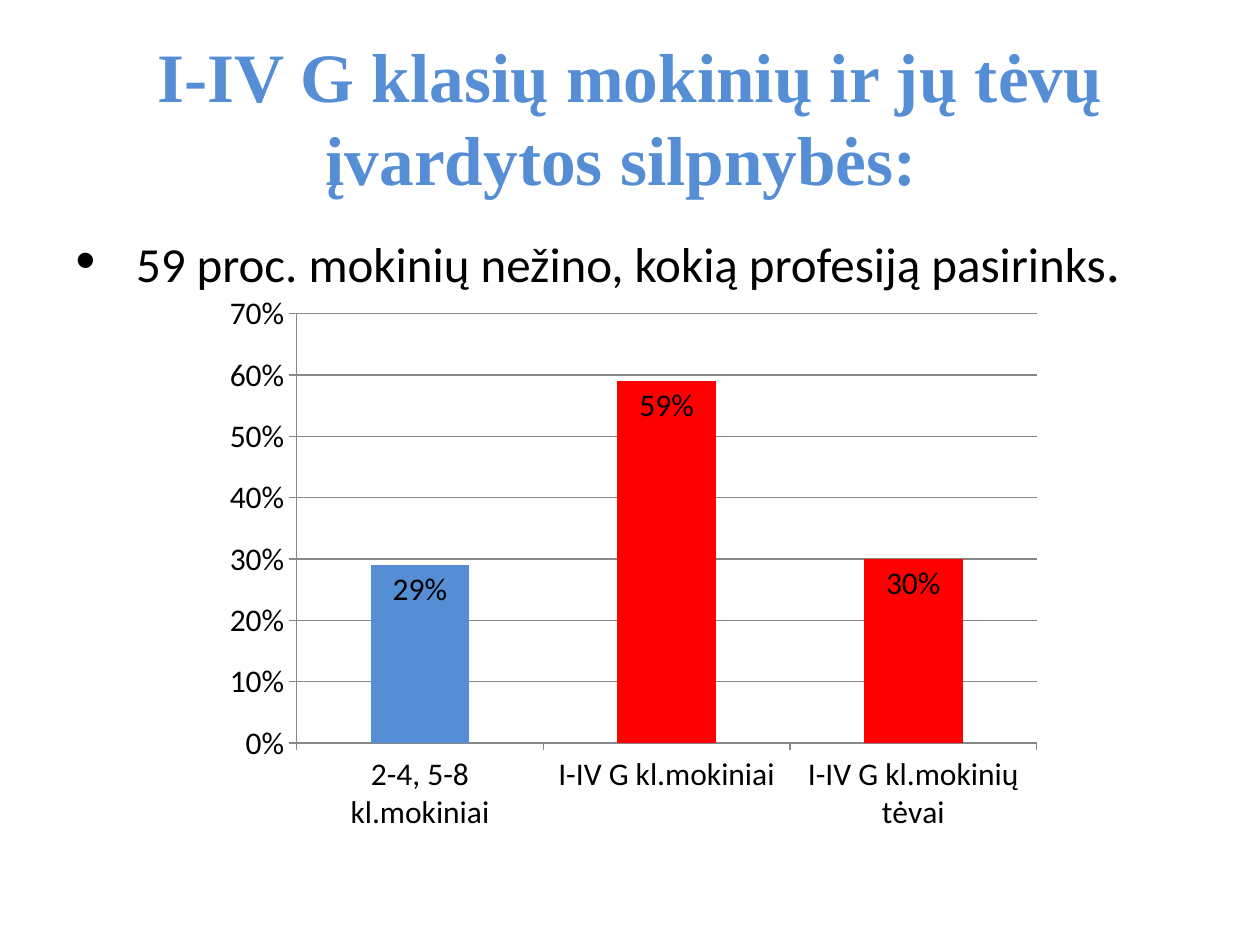
from dataclasses import dataclass
from typing import Any

from lxml.etree import SubElement as Sub
from pptx import Presentation
from pptx.chart.data import CategoryChartData as Data
from pptx.dml.color import RGBColor as Rgb
from pptx.enum.chart import XL_CHART_TYPE as Kind, XL_LABEL_POSITION as Spot, XL_TICK_MARK as Tick
from pptx.enum.text import MSO_ANCHOR as Anchor, MSO_AUTO_SIZE as Fit, PP_ALIGN as Align
from pptx.oxml.ns import qn
from pptx.util import Inches, Pt

BLUE, RED, BLACK, GRAY = "558ED5", "FF0000", "000000", "878787"


@dataclass
class Bar:
    """One column of the chart."""
    name: str
    share: float
    tint: str


BARS = [
    Bar("2-4, 5-8 kl.mokiniai", 0.29, BLUE),
    Bar("I-IV G kl.mokiniai", 0.59, RED),
    Bar("I-IV G kl.mokinių tėvai", 0.3, RED),
]


def put(item: Any, form: dict[str, Any]) -> None:
    """Set each format value on the item."""
    for key, val in form.items():
        setattr(item, key, val)


def box(left: float, top: float, width: float, height: float) -> dict[str, Any]:
    """Give a place on the slide in inches."""
    return dict(left=Inches(left), top=Inches(top), width=Inches(width), height=Inches(height))


def paint(part: Any, tint: str) -> None:
    """Colour a font, fill or line."""
    if hasattr(part, "solid"):
        part.solid()
        part.fore_color.rgb = Rgb.from_string(tint)
    else:
        part.color.rgb = Rgb.from_string(tint)


def style(font: Any, size: float, tint: str = BLACK, name: str = "Calibri", bold: bool = False) -> None:
    """Format a font."""
    put(font, dict(size=Pt(size), name=name, bold=bold))
    paint(font, tint)


def head(shape: Any, text: str) -> None:
    """Fill the title."""
    put(shape, box(0.5, 0.3, 9, 1.25))
    put(shape.text_frame, dict(auto_size=Fit.NONE, word_wrap=True, vertical_anchor=Anchor.MIDDLE))
    para = shape.text_frame.paragraphs[0]
    para.alignment = Align.CENTER
    run = para.add_run()
    run.text = text
    style(run.font, 39.6, BLUE, "Times New Roman", True)


def point(shape: Any, runs: list[tuple[str, float]]) -> None:
    """Fill the body with one bulleted line."""
    put(shape, box(0.5, 1.75, 9.3, 4.95))
    put(shape.text_frame, dict(auto_size=Fit.NONE, word_wrap=True))
    para = shape.text_frame.paragraphs[0]
    for text, size in runs:
        run = para.add_run()
        run.text = text
        style(run.font, size)
    props = para._p.get_or_add_pPr()
    props.set("marL", str(Inches(0.48)))
    props.set("indent", str(-Inches(0.48)))
    Sub(Sub(props, qn("a:spcBef")), qn("a:spcPct")).set("val", "20000")
    Sub(props, qn("a:buSzPct")).set("val", "115000")
    Sub(props, qn("a:buFont")).set("typeface", "Arial")
    Sub(props, qn("a:buChar")).set("char", "•")


def graph(slide: Any, bars: list[Bar]) -> None:
    """Draw the column chart."""
    data = Data(number_format="0%")
    data.categories = [bar.name for bar in bars]
    data.add_series("Series 1", [bar.share for bar in bars])
    place = box(1.69, 2.25, 6.67, 4.44)
    chart = slide.shapes.add_chart(Kind.COLUMN_CLUSTERED, *place.values(), data).chart
    put(chart, dict(has_legend=False, has_title=False))
    style(chart.font, 18)
    for axis in (chart.category_axis, chart.value_axis):
        put(axis, dict(major_tick_mark=Tick.OUTSIDE, minor_tick_mark=Tick.NONE))
        paint(axis.format.line, GRAY)
    scale = chart.value_axis
    put(scale, dict(minimum_scale=0, maximum_scale=0.7, major_unit=0.1))
    put(scale.tick_labels, dict(number_format="0%", number_format_is_linked=False))
    paint(scale.major_gridlines.format.line, GRAY)
    plot = chart.plots[0]
    put(plot, dict(gap_width=150, vary_by_categories=False, has_data_labels=True))
    put(plot.data_labels, dict(show_value=True, position=Spot.INSIDE_END,
                               number_format="0%", number_format_is_linked=False))
    row = plot.series[0]
    paint(row.format.fill, RED)
    for spot, bar in enumerate(bars):
        paint(row.points[spot].format.fill, bar.tint)


def main() -> None:
    """Build and save the slide."""
    deck = Presentation()
    put(deck, dict(slide_width=Inches(10), slide_height=Inches(7.5)))
    slide = deck.slides.add_slide(deck.slide_layouts[1])
    head(slide.shapes.title, "I-IV G klasių mokinių ir jų tėvų įvardytos silpnybės: ")
    point(slide.placeholders[1], [("59 proc. mokinių nežino, kokią profesiją pasirinks", 28), (".", 32)])
    graph(slide, BARS)
    deck.save("out.pptx")


if __name__ == "__main__":
    main()
